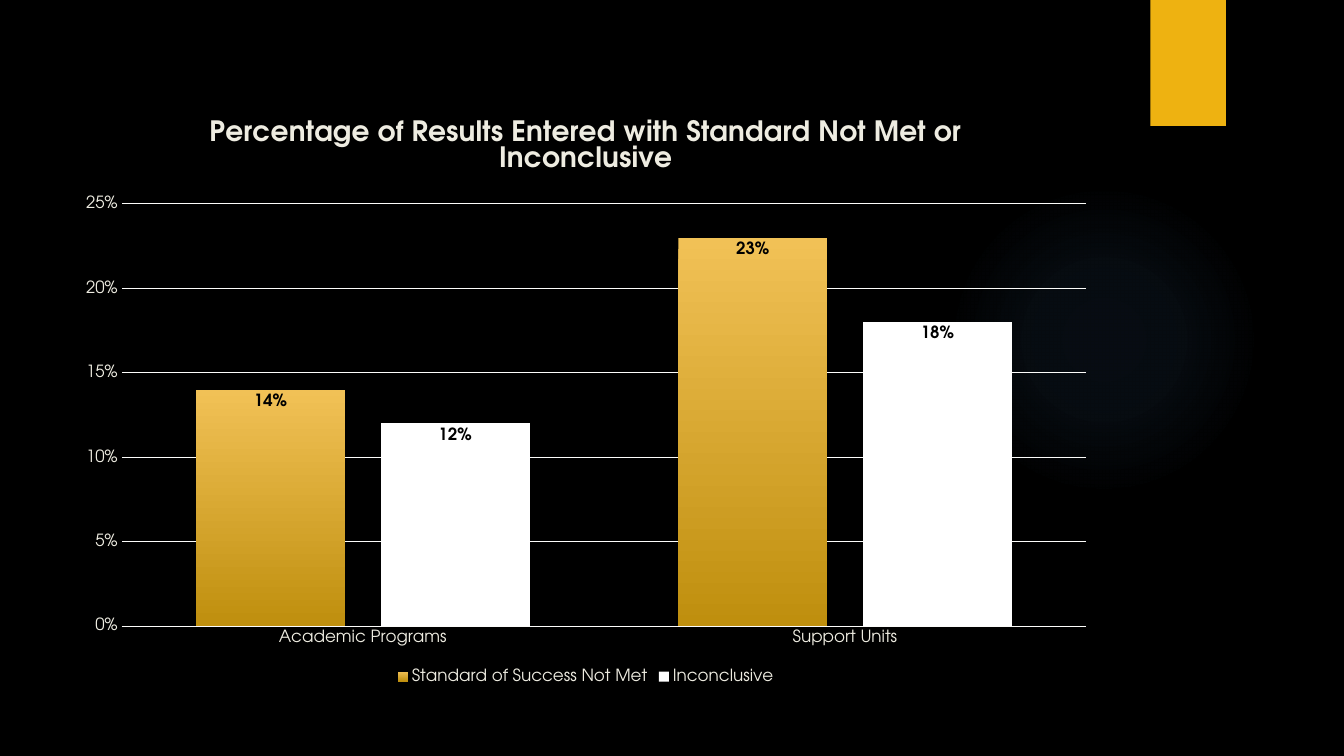
from lxml import etree
from pptx import Presentation
from pptx.chart.data import CategoryChartData
from pptx.dml.color import RGBColor
from pptx.enum.chart import (XL_CHART_TYPE, XL_LABEL_POSITION,
                             XL_LEGEND_POSITION, XL_TICK_MARK)
from pptx.enum.shapes import MSO_SHAPE
from pptx.oxml import parse_xml
from pptx.oxml.ns import qn
from pptx.util import Inches, Pt

COLUMNS = XL_CHART_TYPE.COLUMN_CLUSTERED
IN_END = XL_LABEL_POSITION.INSIDE_END
BOTTOM = XL_LEGEND_POSITION.BOTTOM
NO_TICK = XL_TICK_MARK.NONE
OVAL, RECT = MSO_SHAPE.OVAL, MSO_SHAPE.RECTANGLE

FACE = "TeX Gyre Adventor"
DRAW = "http://schemas.openxmlformats.org/drawingml/2006/main"
HUES = {"back": "000000", "glow": "66B0FF", "tab": "EEB211", "text": "EEECE1",
        "grid": "FCFCFA", "top": "F1C156", "base": "BF8F0E", "white": "FFFFFF"}
TITLE = "Percentage of Results Entered with Standard Not Met or Inconclusive"
UNITS = ["Academic Programs", "Support Units"]
RATES = {"Standard of Success Not Met": (0.14, 0.23),
         "Inconclusive": (0.12, 0.18)}


def hue(name):
    return RGBColor.from_string(HUES[name])


def style(font, size, name="text", bold=False):
    for key, value in {"name": FACE, "size": Pt(size), "bold": bold}.items():
        setattr(font, key, value)
    font.color.rgb = hue(name)


def rule(line):
    line.color.rgb = hue("grid")
    line.width = Pt(0.75)


def add_plain(slide, kind, box):
    """Add a preset shape with neither outline nor shadow."""
    shape = slide.shapes.add_shape(kind, *map(Inches, box))
    shape.line.fill.background()
    shape.shadow.inherit = False
    return shape


def add_glow(slide, box):
    shape = add_plain(slide, OVAL, box)
    shape.fill.gradient()
    grad = shape.element.spPr.find(qn("a:gradFill"))
    stops = "".join(
        f'<a:gs pos="{pos}000"><a:srgbClr val="{HUES["glow"]}">'
        f'<a:alpha val="{alpha}000"/></a:srgbClr></a:gs>'
        for pos, alpha in ((0, 7), (36, 6), (69, 0)))
    fresh = parse_xml(
        f'<a:gradFill xmlns:a="{DRAW}" rotWithShape="1"><a:gsLst>{stops}</a:gsLst>'
        '<a:path path="circle"><a:fillToRect l="50000" t="50000" r="50000" '
        'b="50000"/></a:path></a:gradFill>')
    grad.getparent().replace(grad, fresh)


def add_tab(slide, box):
    shape = add_plain(slide, RECT, box)
    shape.fill.solid()
    shape.fill.fore_color.rgb = hue("tab")
    effects = shape.element.spPr.find(qn("a:effectLst"))
    effects.append(parse_xml(
        f'<a:outerShdw xmlns:a="{DRAW}" blurRad="{Pt(3)}" dist="{Pt(2)}" '
        'dir="5400000" rotWithShape="0"><a:srgbClr val="000000">'
        '<a:alpha val="45000"/></a:srgbClr></a:outerShdw>'))


def place_plot(chart, shares):
    """Fix the inner plot area, given as shares of the chart's size."""
    area = chart.element.chart.plotArea
    for old in area.findall(qn("c:layout")):
        area.remove(old)
    layout = etree.Element(qn("c:layout"))
    manual = etree.SubElement(layout, qn("c:manualLayout"))
    parts = {"layoutTarget": "inner", "xMode": "edge", "yMode": "edge",
             **dict(zip("xywh", shares))}
    for tag, value in parts.items():
        etree.SubElement(manual, qn(f"c:{tag}")).set("val", str(value))
    area.insert(0, layout)


def format_axes(chart):
    units, rates = chart.category_axis, chart.value_axis
    for axis in (units, rates):
        axis.major_tick_mark = axis.minor_tick_mark = NO_TICK
        style(axis.tick_labels.font, 12)
    rule(units.format.line)
    rates.format.line.fill.background()
    rule(rates.major_gridlines.format.line)
    for key, value in {"minimum_scale": 0, "maximum_scale": 0.25,
                       "major_unit": 0.05}.items():
        setattr(rates, key, value)
    rates.tick_labels.number_format = "0%"
    rates.tick_labels.number_format_is_linked = False


def format_bars(plot):
    for key, value in {"gap_width": 100, "overlap": -24,
                       "vary_by_categories": False}.items():
        setattr(plot, key, value)
    unmet, unsure = plot.series
    fill = unmet.format.fill
    fill.gradient()
    fill.gradient_angle = 270
    for stop, name in zip(fill.gradient_stops, ("top", "base")):
        stop.color.rgb = hue(name)
    unsure.format.fill.solid()
    unsure.format.fill.fore_color.rgb = hue("white")
    for series in plot.series:
        series.invert_if_negative = False
        labels = series.data_labels
        for key, value in {"show_value": True, "position": IN_END,
                           "number_format": "0%",
                           "number_format_is_linked": False}.items():
            setattr(labels, key, value)
        style(labels.font, 12, "back", True)


def add_rates(slide, box):
    data = CategoryChartData(number_format="0%")
    data.categories = UNITS
    for name, values in RATES.items():
        data.add_series(name, values)
    chart = slide.shapes.add_chart(COLUMNS, *map(Inches, box), data).chart
    style(chart.font, 10, "white")
    chart.has_title = True
    chart.chart_title.include_in_layout = False
    text = chart.chart_title.text_frame
    text.text = TITLE
    style(text.paragraphs[0].runs[0].font, 20, bold=True)
    chart.has_legend = True
    chart.legend.position = BOTTOM
    chart.legend.include_in_layout = False
    style(chart.legend.font, 12)
    format_axes(chart)
    format_bars(chart.plots[0])
    place_plot(chart, (0.054, 0.184, 0.927, 0.711))


def main():
    deck = Presentation()
    deck.slide_width, deck.slide_height = Inches(13.33), Inches(7.5)
    slide = deck.slides.add_slide(deck.slide_layouts[6])
    slide.background.fill.solid()
    slide.background.fill.fore_color.rgb = hue("back")
    add_glow(slide, (9.41, 1.83, 3.08, 3.08))
    add_tab(slide, (11.41, 0, 0.75, 1.25))
    add_rates(slide, (0.65, 0.94, 10.32, 5.89))
    deck.save("out.pptx")


if __name__ == "__main__":
    main()
